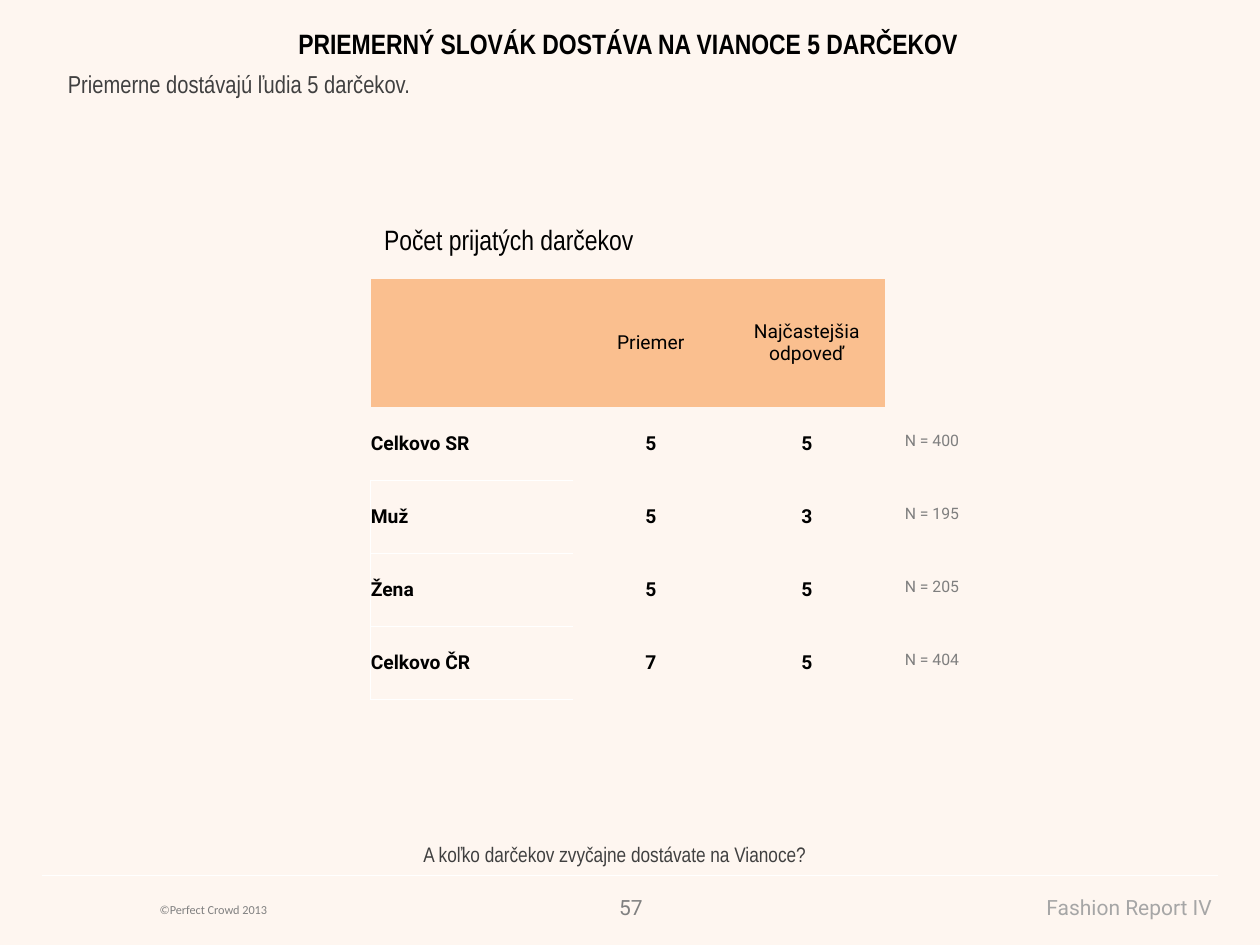
from typing import NamedTuple

from lxml import etree
from pptx import Presentation
from pptx import util as u
from pptx.dml.color import RGBColor
from pptx.enum import shapes, text
from pptx.oxml import ns

Pt = u.Pt
CREAM = RGBColor(0xFE, 0xF6, 0xF0)
PEACH = RGBColor(0xFA, 0xBF, 0x8F)
WHITE = RGBColor(0xFF, 0xFF, 0xFF)
BLACK = RGBColor(0, 0, 0)
DARK = RGBColor(0x40, 0x40, 0x40)
GREY = RGBColor(0x80, 0x80, 0x80)
MID = RGBColor(0x7F, 0x7F, 0x7F)
PALE = RGBColor(0xA6, 0xA6, 0xA6)

LEFT, MIDDLE, RIGHT = text.PP_ALIGN.LEFT, text.PP_ALIGN.CENTER, text.PP_ALIGN.RIGHT
TOP, BOTTOM = text.MSO_ANCHOR.TOP, text.MSO_ANCHOR.BOTTOM
NARROW = "Arial Narrow"
PLAIN = "{2D5ABB26-0587-4C30-8999-92F81FD0307C}"


class Label(NamedTuple):
    words: str
    left: float
    top: float
    width: float
    height: float
    size: float
    color: RGBColor
    font: str = NARROW
    align: text.PP_ALIGN = LEFT
    bold: bool = False
    anchor: text.MSO_ANCHOR = TOP


class Group(NamedTuple):
    name: str
    mean: str
    mode: str
    base: str


LABELS = [
    Label("©Perfect Crowd 2013", 84.2, 512, 209.5, 15.8, 7, GREY, "Calibri"),
    Label("Fashion Report IV", 432.7, 507.6, 267, 21.6, 12, PALE, "Roboto", RIGHT),
    Label("57", 344.9, 507.6, 29.5, 21.6, 12, GREY, "Roboto", RIGHT),
    Label("A koľko darčekov zvyčajne dostávate na Vianoce?",
          25.2, 463, 652.3, 36, 12, DARK, align=MIDDLE, anchor=BOTTOM),
    Label("PRIEMERNÝ SLOVÁK DOSTÁVA NA VIANOCE 5 DARČEKOV",
          40.3, 11.5, 637.2, 26.6, 16, BLACK, align=MIDDLE, bold=True),
    Label("Priemerne dostávajú ľudia 5 darčekov.", 31.7, 36, 664.6, 197.3, 14, DARK),
    Label("Počet prijatých darčekov", 212.4, 123.8, 249, 26.6, 16, BLACK),
]
HEAD = ["", "Priemer", "Najčastejšia odpoveď"]
GROUPS = [
    Group("Celkovo SR", "5", "5", "N = 400"),
    Group("Muž", "5", "3", "N = 195"),
    Group("Žena", "5", "5", "N = 205"),
    Group("Celkovo ČR", "7", "5", "N = 404"),
]
ROW = 41.75


def write(frame, words: str, *, size: float, color: RGBColor, font: str = "Roboto",
          align=LEFT, bold: bool = False) -> None:
    frame.word_wrap = True
    para = frame.paragraphs[0]
    para.alignment = align
    para.font.size = Pt(size)
    if words:
        run = para.add_run()
        run.text = words
        run.font.name = font
        run.font.size = Pt(size)
        run.font.bold = bold
        run.font.color.rgb = color


def add_label(slide, label: Label) -> None:
    box = slide.shapes.add_textbox(
        Pt(label.left), Pt(label.top), Pt(label.width), Pt(label.height))
    box.text_frame.vertical_anchor = label.anchor
    write(box.text_frame, label.words, size=label.size, color=label.color,
          font=label.font, align=label.align, bold=label.bold)


def add_grid(slide, left: float, top: float, cols: list[float], rows: list[float]):
    shape = slide.shapes.add_table(
        len(rows), len(cols), Pt(left), Pt(top), Pt(sum(cols)), Pt(sum(rows)))
    grid = shape.table
    grid.first_row = grid.horz_banding = False
    shape._element.find(".//" + ns.qn("a:tableStyleId")).text = PLAIN
    for col, width in zip(grid.columns, cols):
        col.width = Pt(width)
    for row, height in zip(grid.rows, rows):
        row.height = Pt(height)
    return grid


def fill_cell(cell, words: str, *, fill: RGBColor | None = None, **style) -> None:
    cell.margin_left = cell.margin_right = cell.margin_top = cell.margin_bottom = 0
    cell.vertical_anchor = text.MSO_ANCHOR.MIDDLE
    if fill is None:
        cell.fill.background()
    else:
        cell.fill.solid()
        cell.fill.fore_color.rgb = fill
    write(cell.text_frame, words, **style)


def edge_cell(cell, sides: str) -> None:
    props = cell._tc.get_or_add_tcPr()
    for spot, side in enumerate(sides):
        line = etree.Element(ns.qn("a:ln" + side), w=str(Pt(0.5)))
        fill = etree.SubElement(line, ns.qn("a:solidFill"))
        etree.SubElement(fill, ns.qn("a:srgbClr"), val=str(WHITE))
        props.insert(spot, line)


def add_rule(slide) -> None:
    rule = slide.shapes.add_connector(
        shapes.MSO_CONNECTOR.STRAIGHT, Pt(24), Pt(500.4), Pt(696), Pt(500.4))
    rule.line.color.rgb = WHITE
    rule.line.width = Pt(0.75)
    etree.SubElement(rule._element.spPr, ns.qn("a:effectLst"))


def add_gifts(slide) -> None:
    count = len(GROUPS)
    main = add_grid(slide, 211.9, 159.2, [115.4, 89.2, 89.2], [73.4] + [ROW] * count)
    side = add_grid(slide, 517, 231.3, [44], [ROW] * count)
    for col, words in enumerate(HEAD):
        fill_cell(main.cell(0, col), words, fill=PEACH, size=11, color=BLACK, align=MIDDLE)
    for row, group in enumerate(GROUPS):
        for col, words in enumerate(group[:3]):
            fill_cell(main.cell(row + 1, col), words, size=11, color=BLACK,
                      align=MIDDLE if col else LEFT, bold=True)
        edge_cell(main.cell(row + 1, 0), "LTB" if row else "B")
        fill_cell(side.cell(row, 0), group.base, size=9, color=MID)


def main() -> None:
    deck = Presentation()
    deck.slide_width, deck.slide_height = Pt(720), Pt(540)
    slide = deck.slides.add_slide(deck.slide_layouts[6])
    slide.background.fill.solid()
    slide.background.fill.fore_color.rgb = CREAM
    add_rule(slide)
    for label in LABELS:
        add_label(slide, label)
    add_gifts(slide)
    deck.save("out.pptx")


if __name__ == "__main__":
    main()
